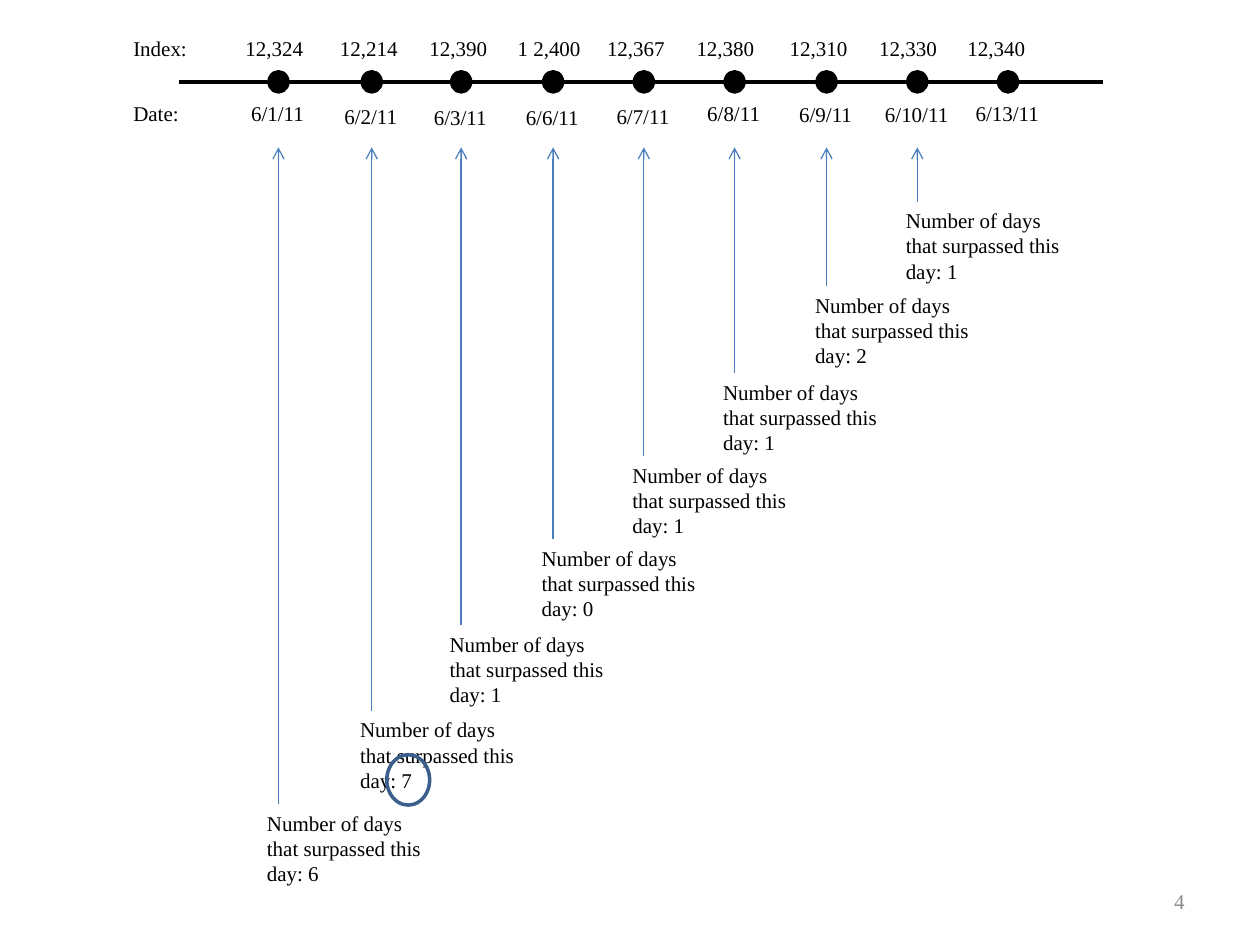
"""Build a timeline slide of daily index values and how many later days surpassed each."""
from lxml import etree
from pptx import Presentation
from pptx import util as u
from pptx.dml.color import RGBColor
from pptx.enum import shapes, text
from pptx.oxml.ns import qn

BLACK = RGBColor(0x00, 0x00, 0x00)
GRAY = RGBColor(0x8C, 0x8C, 0x8C)
ARROW_BLUE = RGBColor(0x4B, 0x7E, 0xBC)
RING_BLUE = RGBColor(0x3A, 0x5F, 0x8C)
FONT = "Times New Roman"

# index value, value left, date, day centre, date top, days that surpassed it, note top
DAYS = [
    ("12,324", 1.95, "6/1/11", 2.21, 0.75, 6, 6.38),
    ("12,214", 2.70, "6/2/11", 2.95, 0.77, 7, 5.64),
    ("12,390", 3.41, "6/3/11", 3.66, 0.78, 1, 4.96),
    ("1 2,400", 4.11, "6/6/11", 4.39, 0.78, 0, 4.28),
    ("12,367", 4.82, "6/7/11", 5.11, 0.77, 1, 3.62),
    ("12,380", 5.53, "6/8/11", 5.83, 0.75, 1, 2.96),
    ("12,310", 6.27, "6/9/11", 6.56, 0.76, 2, 2.27),
    ("12,330", 6.98, "6/10/11", 7.28, 0.76, 1, 1.60),
    ("12,340", 7.68, "6/13/11", 8.00, 0.75, None, None),
]
LABEL_LEFT, INSET = 0.96, 0.1
AXIS_Y, ARROW_TIP = 0.65, 1.17
DOT_WIDTH, DOT_HEIGHT = 0.15, 0.16
NOTE_WIDTH, NOTE_HEIGHT, NOTE_SHIFT = 1.45, 0.71, 0.19
LINE_HEIGHT = 0.3


def add_text(slide, content, left, top, width, height=LINE_HEIGHT, color=BLACK,
             align=text.PP_ALIGN.LEFT, anchor=text.MSO_ANCHOR.TOP, wrap=True):
    box = slide.shapes.add_textbox(*map(u.Inches, (left, top, width, height)))
    frame = box.text_frame
    frame.word_wrap = wrap
    frame.vertical_anchor = anchor
    paragraph = frame.paragraphs[0]
    paragraph.alignment = align
    run = paragraph.add_run()
    run.text = content
    run.font.name, run.font.size = FONT, u.Pt(12)
    run.font.color.rgb = color
    return paragraph


def add_tab_stops(paragraph, positions):
    stops = etree.SubElement(paragraph._p.get_or_add_pPr(), qn("a:tabLst"))
    for position in positions:
        etree.SubElement(stops, qn("a:tab"), pos=str(u.Inches(position)), algn="l")


def add_line(slide, start, end, color, width, arrow=False):
    points = map(u.Inches, (*start, *end))
    line = slide.shapes.add_connector(shapes.MSO_CONNECTOR.STRAIGHT, *points)
    line.line.color.rgb, line.line.width = color, u.Pt(width)
    if arrow:
        etree.SubElement(line.line._get_or_add_ln(), qn("a:tailEnd"), type="arrow")
    etree.SubElement(line._element.spPr, qn("a:effectLst"))


def add_ellipse(slide, left, top, width, height, color, filled):
    bounds = map(u.Inches, (left, top, width, height))
    shape = slide.shapes.add_shape(shapes.MSO_SHAPE.OVAL, *bounds)
    shape.shadow.inherit = False
    shape.line.color.rgb, shape.line.width = color, u.Pt(2)
    if filled:
        shape.fill.solid()
        shape.fill.fore_color.rgb = color
    else:
        shape.fill.background()


def main():
    presentation = Presentation()
    presentation.slide_width, presentation.slide_height = u.Inches(10), u.Inches(7.5)
    slide = presentation.slides.add_slide(presentation.slide_layouts[6])

    add_text(slide, "4", 7.17, 6.95, 2.33, 0.4, GRAY,
             text.PP_ALIGN.RIGHT, text.MSO_ANCHOR.MIDDLE)
    add_line(slide, (1.42, AXIS_Y), (8.75, AXIS_Y), BLACK, 2)

    values = add_text(slide, "\t".join(["Index:"] + [day[0] for day in DAYS]),
                      LABEL_LEFT, 0.23, 7.46)
    add_tab_stops(values, [day[1] - LABEL_LEFT - INSET for day in DAYS])
    add_text(slide, "Date:", LABEL_LEFT, 0.75, 0.57, wrap=False)

    for _, _, date, center, date_top, count, note_top in DAYS:
        add_ellipse(slide, center - DOT_WIDTH / 2, AXIS_Y - DOT_HEIGHT / 2,
                    DOT_WIDTH, DOT_HEIGHT, BLACK, True)
        date_width = 0.63 if len(date) == 6 else 0.71
        add_text(slide, date, center - date_width / 2, date_top, date_width, wrap=False)
        if count is not None:
            add_line(slide, (center, note_top), (center, ARROW_TIP), ARROW_BLUE, 0.75, True)
            add_text(slide, f"Number of days that surpassed this day: {count}",
                     center - NOTE_SHIFT, note_top, NOTE_WIDTH, NOTE_HEIGHT)

    add_ellipse(slide, 3.07, 5.99, 0.34, 0.4, RING_BLUE, False)
    presentation.save("out.pptx")


if __name__ == "__main__":
    main()
